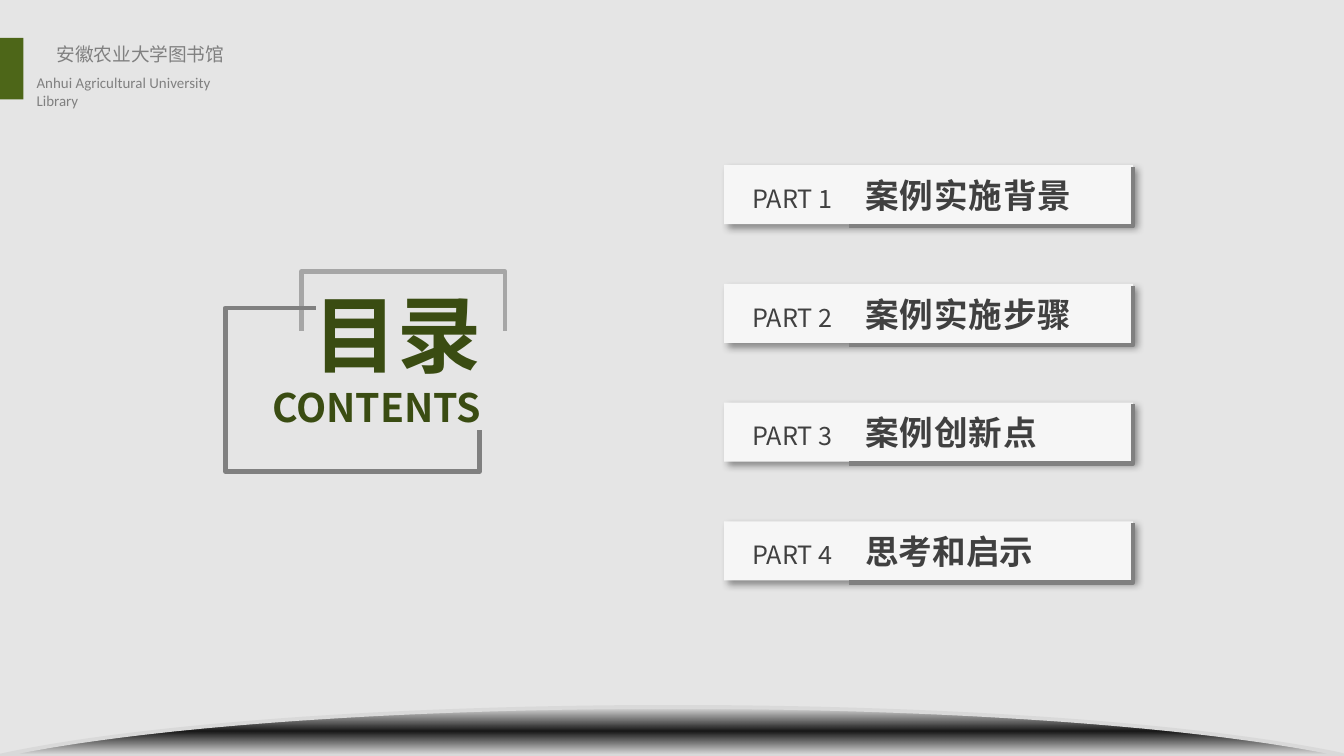
import pptx
import pptx.util
import pptx.dml.color
import pptx.enum.shapes
import pptx.enum.text
import pptx.oxml
import pptx.oxml.ns

Pt = pptx.util.Pt
RECT = pptx.enum.shapes.MSO_SHAPE.RECTANGLE
RIGHT = pptx.enum.text.PP_ALIGN.RIGHT

COLORS = {
    "background": "E5E5E5", "tab": "4D6618", "header": "808080",
    "card": "F6F6F6", "text": "404040", "title": "3A4C12",
    "dark_line": "808080", "light_line": "A6A6A6", "arc_line": "D9D9D9",
}
CJK, LATIN = "Noto Sans CJK SC", "Calibri"

# label, title, letter spacing of the title
PARTS = [
    ("PART 1", "案例实施背景", 0.5),
    ("PART 2", "案例实施步骤", 0.5),
    ("PART 3", "案例创新点", 0.5),
    ("PART 4", "思考和启示", 0),
]
CARD_X, CARD_Y, CARD_W, CARD_H, PITCH = 388, 88.5, 219, 31.7, 63.6

TITLE_FRAMES = [
    ("light_line", [(161.5, 177.2), (161.5, 145.5), (270.5, 145.5), (270.5, 177.2)]),
    ("dark_line", [(257, 230.4), (257, 252.5), (120.7, 252.5), (120.7, 165), (169.2, 165)]),
]
# Cubic curves of the floor, left to right
FLOOR_CURVES = [
    [(4.3, 403.9), (77, 388.8), (209.5, 378.7), (360.5, 378.7)],
    [(360.5, 378.7), (512, 378.7), (643.7, 388.8), (717, 403.9)],
]
FLOOR_Y = 404.8

NS = pptx.oxml.ns.nsdecls("a")
SHADOW = f"""<a:effectLst {NS}><a:outerShdw blurRad="{Pt(4)}" dist="{Pt(3)}"
 dir="2700000" algn="tl" rotWithShape="0"><a:srgbClr val="000000"><a:alpha val="40000"/>
</a:srgbClr></a:outerShdw></a:effectLst>"""
FLOOR_FILL = f"""<a:gradFill {NS} rotWithShape="1"><a:gsLst>
<a:gs pos="0"><a:srgbClr val="000000"><a:alpha val="90000"/></a:srgbClr></a:gs>
<a:gs pos="100000"><a:srgbClr val="000000"><a:alpha val="0"/></a:srgbClr></a:gs></a:gsLst>
<a:path path="shape"><a:fillToRect l="50000" t="50000" r="50000" b="50000"/></a:path>
</a:gradFill>"""


def color(name):
    return pptx.dml.color.RGBColor.from_string(COLORS[name])


def add_run(p, text, size, fill, font=CJK, bold=False, spacing=0):
    r = p.add_run()
    r.text = text
    r.font.size = Pt(size)
    r.font.bold = bold
    r.font.color.rgb = color(fill)
    r.font.name = font
    props = r.font._element
    props.append(pptx.oxml.parse_xml(f'<a:ea {NS} typeface="{font}"/>'))
    if spacing:
        props.set("spc", str(int(spacing * 100)))


def add_text(s, box, paragraphs, align=None, insets=(7.2, 3.6), wrap=True, tab=None):
    """Each paragraph is a list of run formats, given as keyword dicts."""
    tf = s.shapes.add_textbox(*map(Pt, box)).text_frame
    tf.word_wrap = wrap
    tf.margin_left = tf.margin_right = Pt(insets[0])
    tf.margin_top = tf.margin_bottom = Pt(insets[1])
    for i, runs in enumerate(paragraphs):
        p = tf.add_paragraph() if i else tf.paragraphs[0]
        p.alignment = align
        if tab:
            p._p.get_or_add_pPr().append(pptx.oxml.parse_xml(
                f'<a:tabLst {NS}><a:tab pos="{Pt(tab)}" algn="l"/></a:tabLst>'))
        for run in runs:
            add_run(p, **run)


def add_rect(s, box, fill):
    sp = s.shapes.add_shape(RECT, *map(Pt, box))
    sp.shadow.inherit = False
    sp.fill.solid()
    sp.fill.fore_color.rgb = color(fill)
    sp.line.fill.background()
    return sp


def add_path(s, points, line, width=2.5, close=False):
    pts = [(Pt(x), Pt(y)) for x, y in points]
    builder = s.shapes.build_freeform(*pts[0])
    builder.add_line_segments(pts[1:], close=close)
    sp = builder.convert_to_shape()
    sp.shadow.inherit = False
    sp.fill.background()
    sp.line.color.rgb = color(line)
    sp.line.width = Pt(width)
    return sp


def curve_points(curve, steps=40):
    for i in range(steps + 1):
        t = i / steps
        weights = ((1 - t) ** 3, 3 * t * (1 - t) ** 2, 3 * t * t * (1 - t), t ** 3)
        yield tuple(sum(w * c for w, c in zip(weights, axis)) for axis in zip(*curve))


def add_floor(s):
    arc = [pt for curve in FLOOR_CURVES for pt in curve_points(curve)]
    points = [(0, FLOOR_Y), *arc, (720.5, FLOOR_Y)]
    sp = add_path(s, points, "arc_line", width=2, close=True)
    props = sp._element.spPr
    old = props.find(pptx.oxml.ns.qn("a:noFill"))
    props.replace(old, pptx.oxml.parse_xml(FLOOR_FILL))


def add_part(s, top, label, title, spacing):
    card = add_rect(s, (CARD_X, top, CARD_W, CARD_H), "card")
    props = card._element.spPr
    props.replace(props.find(pptx.oxml.ns.qn("a:effectLst")), pptx.oxml.parse_xml(SHADOW))
    add_text(s, (396, top + 1.6, 211.7, 28.8), [[
        dict(text=label + "\t", size=13.5, fill="text"),
        dict(text=title, size=18, fill="text", bold=True, spacing=spacing),
    ]], tab=60.5)
    right, bottom = CARD_X + CARD_W, top + 1 + CARD_H
    add_path(s, [(right, top + 1), (right, bottom), (455, bottom)], "dark_line")


def main():
    prs = pptx.Presentation()
    prs.slide_width, prs.slide_height = Pt(720), Pt(405)
    s = prs.slides.add_slide(prs.slide_layouts[6])
    s.background.fill.solid()
    s.background.fill.fore_color.rgb = color("background")

    add_rect(s, (0, 20.3, 12.5, 32.9), "tab")
    add_text(s, (25, 20.3, 101.5, 17.3),
             [[dict(text="安徽农业大学图书馆", size=10, fill="header")]],
             insets=(5.4, 2.7), wrap=False)
    add_text(s, (14.2, 36.9, 127.4, 15),
             [[dict(text="Anhui Agricultural University Library", size=8,
                    fill="header", font=LATIN)]], insets=(5.4, 2.7))
    add_floor(s)
    add_text(s, (77, 147.6, 188, 87), [
        [dict(text="目录", size=45, fill="title", bold=True)],
        [dict(text="CONTENTS", size=21, fill="title", bold=True)],
    ], align=RIGHT)
    for line, points in TITLE_FRAMES:
        add_path(s, points, line)
    for i, part in enumerate(PARTS):
        add_part(s, CARD_Y + i * PITCH, *part)
    prs.save("out.pptx")


if __name__ == "__main__":
    main()
